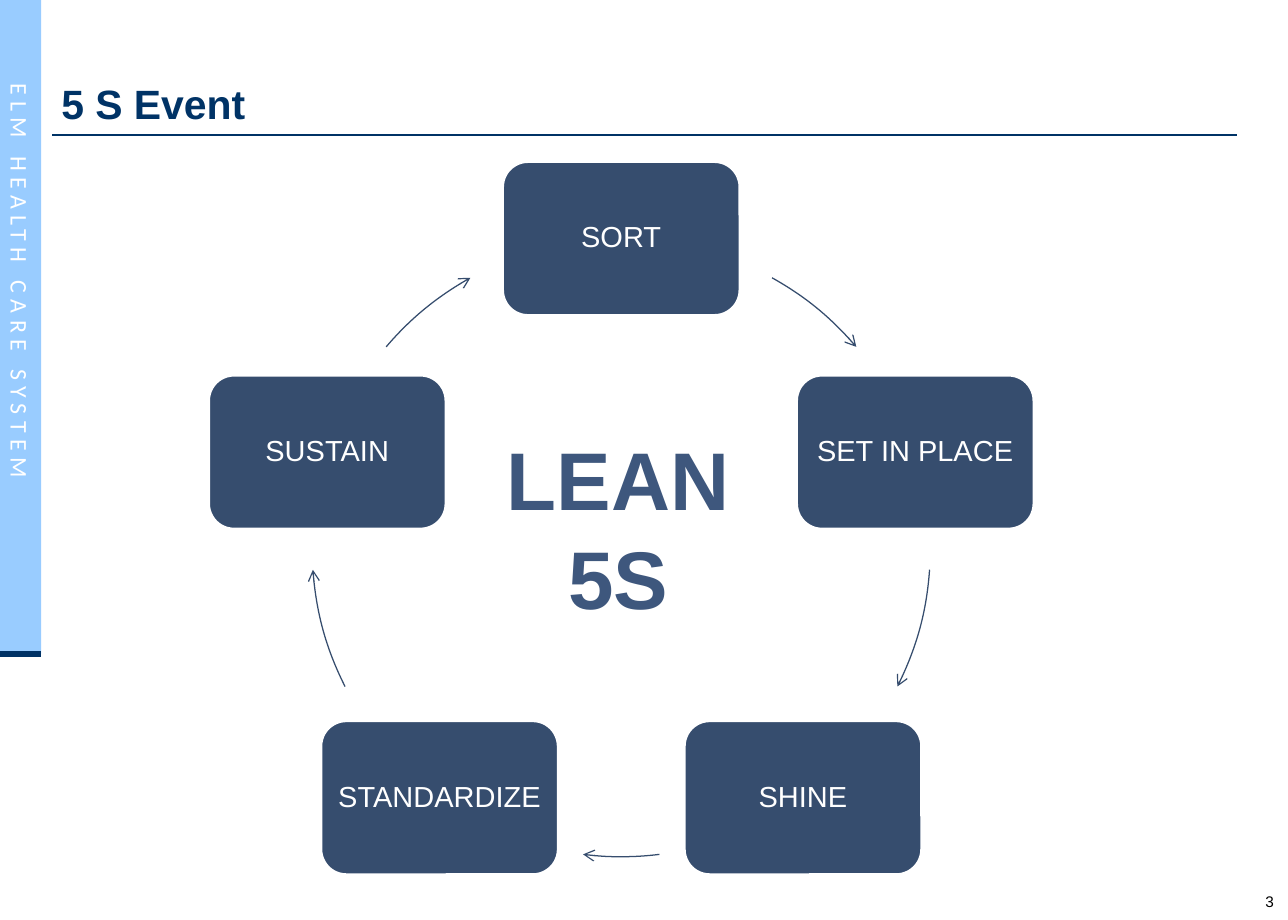
from math import cos, radians, sin

from lxml import etree
from pptx import Presentation
from pptx.dml.color import RGBColor
from pptx.enum.shapes import MSO_CONNECTOR, MSO_SHAPE
from pptx.enum.text import MSO_ANCHOR, PP_ALIGN
from pptx.oxml.ns import qn
from pptx.util import Inches, Pt

RECTANGLE = MSO_SHAPE.RECTANGLE
ROUNDED = MSO_SHAPE.ROUNDED_RECTANGLE
ARC = MSO_SHAPE.ARC
STRAIGHT = MSO_CONNECTOR.STRAIGHT
LEFT, CENTER = PP_ALIGN.LEFT, PP_ALIGN.CENTER
TOP, MIDDLE, BOTTOM = MSO_ANCHOR.TOP, MSO_ANCHOR.MIDDLE, MSO_ANCHOR.BOTTOM

NAVY = RGBColor(0x00, 0x33, 0x66)
SKY = RGBColor(0x99, 0xCC, 0xFF)
SLATE = RGBColor(0x36, 0x4D, 0x6E)
STEEL = RGBColor(0x3E, 0x57, 0x7D)
WHITE = RGBColor(0xFF, 0xFF, 0xFF)
BLACK = RGBColor(0x00, 0x00, 0x00)

# Grid of 42 columns by 30 rows
WIDTH, HEIGHT = Inches(10.5), Inches(7.5)
COLUMN, ROW = WIDTH / 42, HEIGHT / 30

# Cycle, in grid units; angles run clockwise from the top
CENTER_X, CENTER_Y, RADIUS = 20.26, 17.86, 10.08
STEP_WIDTH, STEP_HEIGHT = 7.76, 5.04
STEPS = ["SORT", "SET IN PLACE", "SHINE", "STANDARDIZE", "SUSTAIN"]
ARROWS = [(29.2, 49.5), (94.1, 116.7), (172.9, 187.1),
          (243.3, 265.9), (310.5, 330.8)]


def place(x, y, width, height):
    return (round(x * COLUMN), round(y * ROW),
            round(width * COLUMN), round(height * ROW))


def write(shape, text, size, color, align=LEFT, anchor=TOP, bold=False,
          font="Arial", margins=(0.1, 0.05), wrap=True):
    frame = shape.text_frame
    frame.word_wrap = wrap
    frame.vertical_anchor = anchor
    frame.margin_left = frame.margin_right = Inches(margins[0])
    frame.margin_top = frame.margin_bottom = Inches(margins[1])
    frame.text = text
    para = frame.paragraphs[0]
    para.alignment = align
    span = para.runs[0]
    span.font.name, span.font.size = font, Pt(size)
    span.font.bold, span.font.color.rgb = bold, color
    return para


def add_text(page, area, text, size, color, **style):
    box = page.shapes.add_textbox(*place(*area))
    write(box, text, size, color, **style)
    return box


def add_block(page, kind, area, fill):
    block = page.shapes.add_shape(kind, *place(*area))
    block.shadow.inherit = False
    block.fill.solid()
    block.fill.fore_color.rgb = fill
    block.line.fill.background()
    return block


def add_rule(page, x, y, length, weight):
    left, top, width, _ = place(x, y, length, 0)
    rule = page.shapes.add_connector(STRAIGHT, left, top, left + width, top)
    rule.line.color.rgb = NAVY
    rule.line.width = Pt(weight)
    etree.SubElement(rule._element.spPr, qn("a:effectLst"))


def add_step(page, label, angle):
    x = CENTER_X + RADIUS * sin(radians(angle)) - STEP_WIDTH / 2
    y = CENTER_Y - RADIUS * cos(radians(angle)) - STEP_HEIGHT / 2
    step = add_block(page, ROUNDED, (x, y, STEP_WIDTH, STEP_HEIGHT), SLATE)
    step.line.color.rgb = WHITE
    step.line.width = Pt(2)
    para = write(step, label, 17, WHITE, align=CENTER, anchor=MIDDLE,
                 margins=(0.02, 0.05))
    para.line_spacing = 0.9


def add_arc_arrow(page, start, end):
    arc = page.shapes.add_shape(ARC, *place(
        CENTER_X - RADIUS, CENTER_Y - RADIUS, 2 * RADIUS, 2 * RADIUS))
    arc.shadow.inherit = False
    arc.fill.background()
    # Arc angles start at three o'clock, 0.6 units to the degree
    for index, angle in enumerate((start, end)):
        arc.adjustments[index] = (angle - 90) % 360 * 0.6
    arc.line.color.rgb = SLATE
    arc.line.width = Pt(0.75)
    etree.SubElement(arc.line._get_or_add_ln(), qn("a:tailEnd"), type="arrow")


def add_frame(page):
    # Side band, rules and page number
    add_block(page, RECTANGLE, (0, 0, 1.34, 21.32), SKY)
    add_rule(page, 0, 21.32, 1.34, 3.5)
    add_rule(page, 1.7, 4.4, 38.64, 1.5)
    add_text(page, (41, 29.08, 0.8, 0.6), "3", 9, BLACK, align=CENTER,
             margins=(0, 0), wrap=False)
    name = add_text(page, (-8.2, 10.48, 17.68, 1.36), "ELM HEALTH CARE SYSTEM",
                    14, WHITE, font="Calibri")
    name.rotation = 90
    letters = name.text_frame.paragraphs[0].runs[0].font
    letters._element.set("spc", "370")


def main():
    deck = Presentation()
    deck.slide_width, deck.slide_height = WIDTH, HEIGHT
    page = deck.slides.add_slide(deck.slide_layouts[6])
    add_frame(page)

    # Cycle of five steps
    for index, (label, arrow) in enumerate(zip(STEPS, ARROWS)):
        add_step(page, label, index * 360 / len(STEPS))
        add_arc_arrow(page, *arrow)

    # Title and centre words
    add_text(page, (2, 0.72, 38, 3.64), "5 S Event", 24, NAVY, bold=True,
             anchor=BOTTOM, margins=(0, 0.05))
    add_text(page, (15.96, 13.8, 8.4, 6.88), "LEAN 5S", 48, STEEL, bold=True,
             align=CENTER)
    deck.save("out.pptx")


if __name__ == "__main__":
    main()
